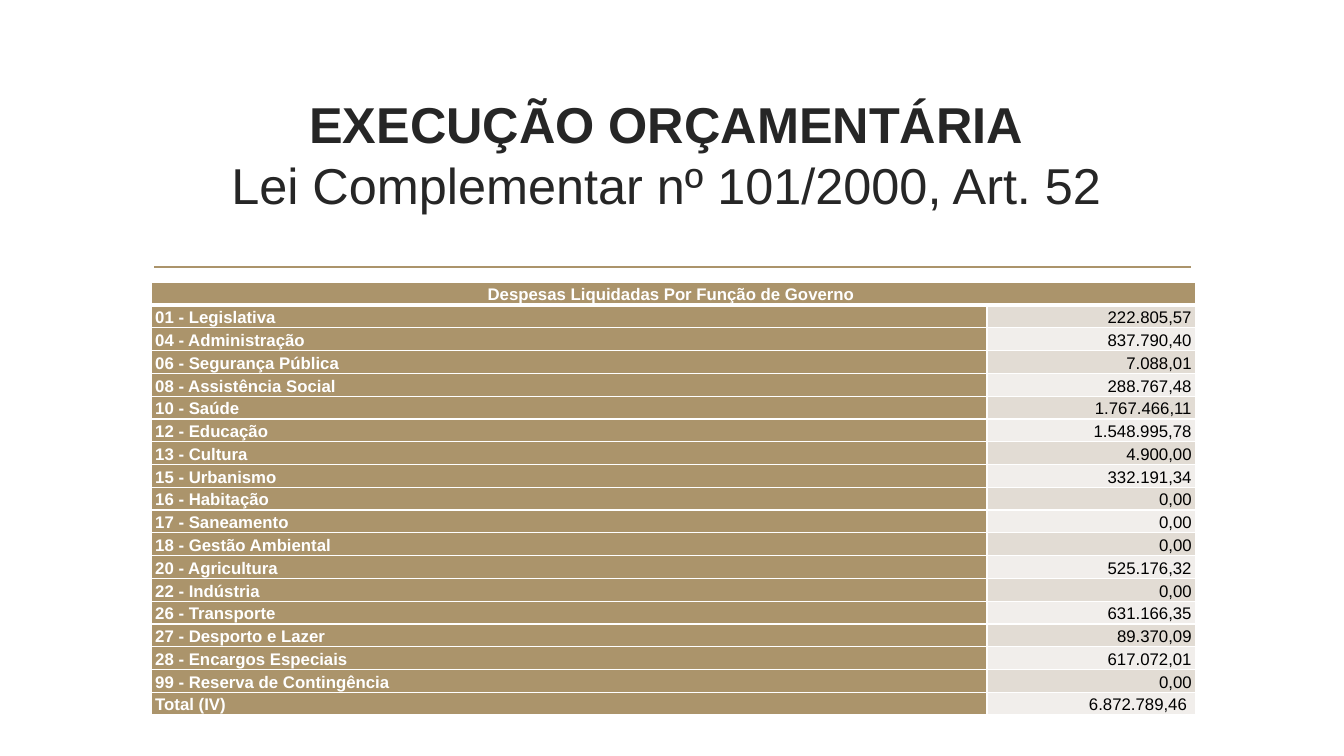
from lxml.etree import SubElement
from pptx import Presentation
from pptx.dml.color import RGBColor as RGB
from pptx.enum.shapes import MSO_CONNECTOR as LINE
from pptx.enum.text import MSO_ANCHOR as ANCHOR, MSO_AUTO_SIZE as FIT, PP_ALIGN as ALIGN
from pptx.oxml.ns import qn
from pptx.util import Inches, Pt

# Content
TITLE = ("EXECUÇÃO ORÇAMENTÁRIA", "Lei Complementar nº 101/2000, Art. 52")
HEAD = "Despesas Liquidadas Por Função de Governo "
ROWS = [
    ("01 - Legislativa", "222.805,57"),
    ("04 - Administração", "837.790,40"),
    ("06 - Segurança Pública", "7.088,01"),
    ("08 - Assistência Social", "288.767,48"),
    ("10 - Saúde", "1.767.466,11"),
    ("12 - Educação", "1.548.995,78"),
    ("13 - Cultura", "4.900,00"),
    ("15 - Urbanismo", "332.191,34"),
    ("16 - Habitação", "0,00"),
    ("17 - Saneamento", "0,00"),
    ("18 - Gestão Ambiental", "0,00"),
    ("20 - Agricultura", "525.176,32"),
    ("22 - Indústria", "0,00"),
    ("26 - Transporte", "631.166,35"),
    ("27 - Desporto e Lazer", "89.370,09"),
    ("28 - Encargos Especiais", "617.072,01"),
    ("99 - Reserva de Contingência", "0,00"),
    ("Total (IV)", "6.872.789,46 "),
]
COLS = (8.29, 2.07)
ROW_H = 0.19
HEX = {"gold": "AB946B", "odd": "E2DCD4", "even": "F1EEEB",
       "white": "FFFFFF", "black": "000000", "dark": "262626"}


def color(name):
    return RGB.from_string(HEX[name])


def style(font, size, bold, ink):
    for key, val in {"name": "Arial", "size": Pt(size), "bold": bold}.items():
        setattr(font, key, val)
    font.color.rgb = color(ink)


def border(cell, top=1, bottom=1):
    props = cell._tc.get_or_add_tcPr()
    for tag, width in {"lnL": 1, "lnR": 1, "lnT": top, "lnB": bottom}.items():
        line = SubElement(props, qn(f"a:{tag}"), w=str(Pt(width)))
        fill = SubElement(line, qn("a:solidFill"))
        SubElement(fill, qn("a:srgbClr"), val=HEX["white"])


def fill_cell(cell, text, back, ink, bold, align):
    cell.fill.solid()
    cell.fill.fore_color.rgb = color(back)
    form = {"vertical_anchor": ANCHOR.MIDDLE,
            "margin_left": Inches(0.04), "margin_right": Inches(0.04),
            "margin_top": Pt(0.4), "margin_bottom": Pt(0.4)}
    for key, val in form.items():
        setattr(cell, key, val)
    para = cell.text_frame.paragraphs[0]
    para.alignment, para.line_spacing = align, 1.15
    run = para.add_run()
    run.text = text
    style(run.font, 12, bold, ink)


deck = Presentation()
deck.slide_width, deck.slide_height = Inches(13.33), Inches(7.5)
slide = deck.slides.add_slide(deck.slide_layouts[5])

# Title
title = slide.shapes.title
place = {"left": 1.36, "top": 0.81, "width": 10.5, "height": 1.43}
for key, val in place.items():
    setattr(title, key, Inches(val))
frame = title.text_frame
frame.word_wrap, frame.auto_size = True, FIT.NONE
frame.vertical_anchor = ANCHOR.MIDDLE
para = frame.paragraphs[0]
para.alignment = ALIGN.CENTER
for i, text in enumerate(TITLE):
    if i:
        para.add_line_break()
    run = para.add_run()
    run.text = text
    style(run.font, 36, i == 0, "dark")

# Rule under the title
rule = slide.shapes.add_connector(
    LINE.STRAIGHT, Inches(1.53), Inches(2.65), Inches(11.81), Inches(2.65))
rule.line.color.rgb = color("gold")
rule.line.width = Pt(1.25)
SubElement(rule._element.spPr, qn("a:effectLst"))

# Table of expenses
count = len(ROWS) + 1
table = slide.shapes.add_table(
    count, 2, Inches(1.5), Inches(2.8),
    Inches(sum(COLS)), Inches(ROW_H * count)).table
table.horz_banding = False
for col, width in zip(table.columns, COLS):
    col.width = Inches(width)
for row in table.rows:
    row.height = Inches(ROW_H)

for cell in table.rows[0].cells:
    border(cell, bottom=3)
table.cell(0, 0).merge(table.cell(0, 1))
fill_cell(table.cell(0, 0), HEAD, "gold", "white", True, ALIGN.CENTER)

for i, (label, value) in enumerate(ROWS, 1):
    name, total = table.rows[i].cells
    for cell in (name, total):
        border(cell, top=3 if i == 1 else 1)
    fill_cell(name, label, "gold", "white", True, ALIGN.LEFT)
    fill_cell(total, value, "odd" if i % 2 else "even", "black", False, ALIGN.RIGHT)

deck.save("out.pptx")
